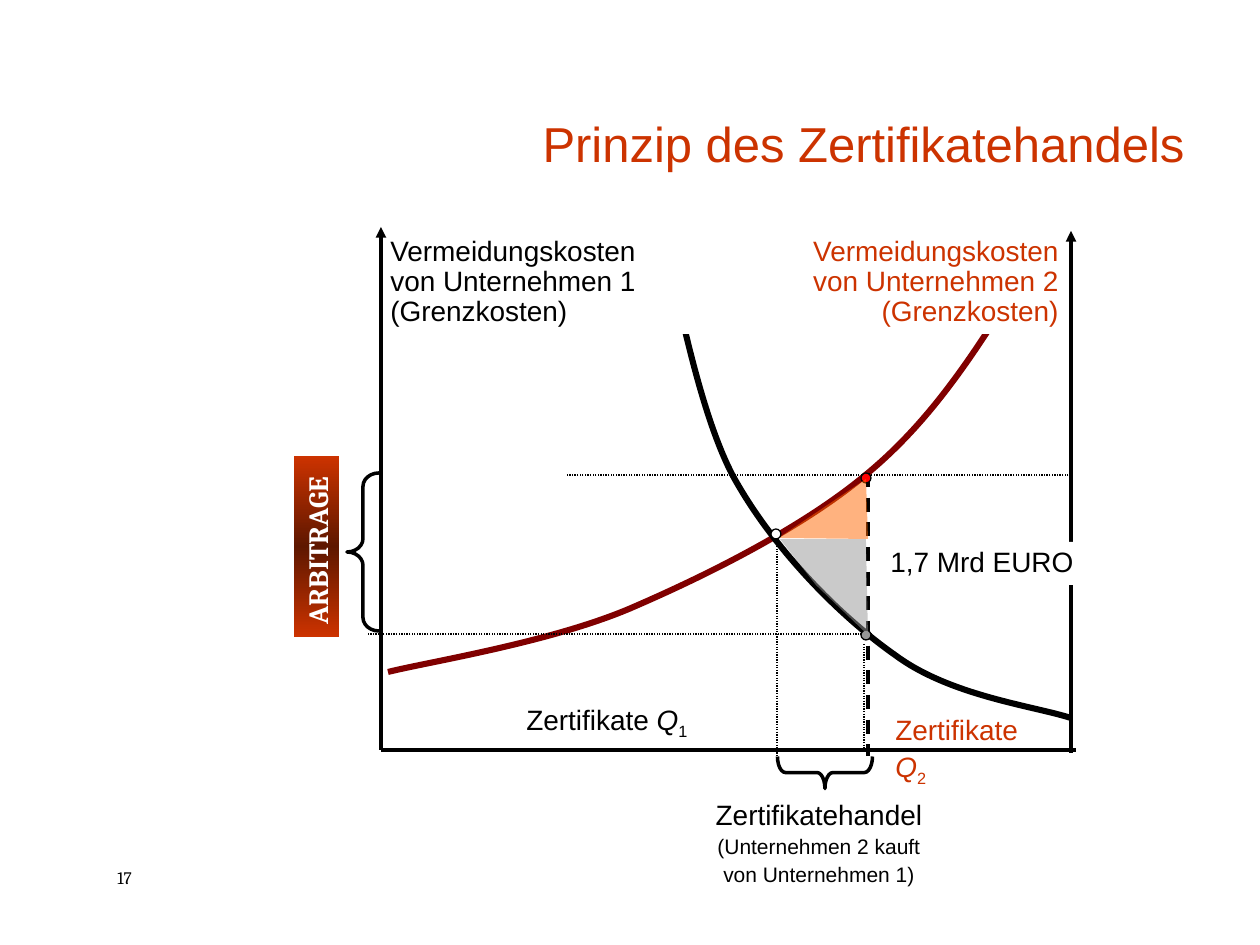
from copy import deepcopy
from dataclasses import dataclass

from lxml.etree import SubElement
from pptx import Presentation
from pptx.dml.color import RGBColor
from pptx.enum.dml import MSO_LINE_DASH_STYLE as Dash
from pptx.enum.shapes import MSO_CONNECTOR, MSO_SHAPE as Preset
from pptx.enum.text import MSO_ANCHOR, PP_ALIGN as Align
from pptx.oxml.ns import qn
from pptx.util import Pt

PX = 914400 / 126
COLORS = {
    "black": "000000", "white": "FFFFFF", "accent": "CC3300",
    "accent_dark": "5E1700", "maroon": "800000", "red": "FF0000",
    "grey": "969696", "orange": "FF6600",
}


def px(*lengths):
    return [round(length * PX) for length in lengths]


def rgb(name):
    return RGBColor.from_string(COLORS[name])


def write(shape, spans, color="black", align=Align.LEFT, spacing=None,
          font="Arial", wrap=True):
    """Fill a shape with one paragraph of (text, size, style) spans."""
    frame = shape.text_frame
    frame.word_wrap = wrap
    para = frame.paragraphs[0]
    para.alignment = align
    if spacing:
        para.line_spacing = spacing
    for text, size, style in spans:
        for index, part in enumerate(text.split("\n")):
            if index:
                para.add_line_break()
            span = para.add_run()
            span.text = part
            span.font.name = font
            span.font.size = Pt(size)
            span.font.color.rgb = rgb(color)
            span.font.bold = style == "bold"
            span.font.italic = style == "italic"
            if style == "sub":
                span.font._element.set("baseline", "-25000")


@dataclass
class Region:
    """Draws on a page with lengths in px, measured from its left and top."""
    page: object
    left: int
    top: int

    def place(self, x, y, *size):
        return px(self.left + x, self.top + y, *size)

    def shape(self, preset, box, fill=None, line=None, width=0.75):
        shape = self.page.shapes.add_shape(preset, *self.place(*box))
        return paint(shape, fill, line, width)

    def label(self, box, spans, fill=None, **style):
        if fill:
            shape = self.shape(Preset.RECTANGLE, box, fill)
        else:
            shape = self.page.shapes.add_textbox(*self.place(*box))
        shape.text_frame.vertical_anchor = MSO_ANCHOR.TOP
        write(shape, spans, **style)
        return shape

    def dot(self, x, y, fill):
        self.shape(Preset.OVAL, (x - 5, y - 5, 10, 10), fill, "black")

    def brace(self, box, curl, rotation=0):
        shape = self.shape(Preset.LEFT_BRACE, box, None, "black", 2)
        shape.adjustments[0] = curl
        shape.rotation = rotation

    def line(self, start, end, width=2, dash=None, arrow=False):
        line = self.page.shapes.add_connector(
            MSO_CONNECTOR.STRAIGHT, *self.place(*start), *self.place(*end))
        line.line.color.rgb = rgb("black")
        line.line.width = Pt(width)
        if dash:
            line.line.dash_style = dash
        if arrow:
            SubElement(line.line._get_or_add_ln(), qn("a:tailEnd"), type="triangle")
        SubElement(line._element.spPr, qn("a:effectLst"))

    def dotted(self, start, end):
        self.line(start, end, 0.75, Dash.ROUND_DOT)

    def outline(self, points, close):
        (x, y), *others = [(self.left + x, self.top + y) for x, y in points]
        builder = self.page.shapes.build_freeform(x, y, scale=PX)
        builder.add_line_segments(others, close=close)
        return builder.convert_to_shape()

    def curve(self, points, color):
        """Draw Bézier segments: a start, then two handles and an end for each."""
        shape = self.outline(points, close=False)
        steps = list(shape._element.iter(qn("a:lnTo")))
        for first in range(0, len(steps), 3):
            bezier, *others = steps[first:first + 3]
            bezier.tag = qn("a:cubicBezTo")
            for step in others:
                bezier.append(step[0])
                step.getparent().remove(step)
        paint(shape, None, color, 3.5)

    def area(self, points, color):
        shape = paint(self.outline(points, close=True), color)
        tint = shape.fill._xPr.find(qn("a:solidFill"))[0]
        SubElement(tint, qn("a:alpha"), val="50000")


def paint(shape, fill=None, line=None, width=0.75):
    shape.shadow.inherit = False
    if fill:
        shape.fill.solid()
        shape.fill.fore_color.rgb = rgb(fill)
    else:
        shape.fill.background()
    if line:
        shape.line.color.rgb = rgb(line)
        shape.line.width = Pt(width)
    else:
        shape.line.fill.background()
    return shape


def axis_title(region, box, firm, **style):
    text = f"Vermeidungskosten\nvon Unternehmen {firm} (Grenzkosten)"
    region.label(box, [(text, 16, "")], "white", spacing=0.9, **style)


def quantity(region, box, firm, **style):
    spans = [("Zertifikate", 16, ""), (" Q", 16, "italic"), (firm, 16, "sub")]
    region.label(box, spans, spacing=1.1, **style)


def arbitrage_tag(region, box):
    shape = region.label(box, [("ARBITRAGE", 16, "bold")], "accent",
                         color="white", font="Cambria", wrap=False)
    shape.rotation = 270
    fill = shape.fill
    fill.gradient()
    fill.gradient_angle = 90
    for stop in fill.gradient_stops:
        stop.color.rgb = rgb("accent")
    gradient = shape._element.spPr.find(qn("a:gradFill"))
    gradient.set("rotWithShape", "0")
    stops = gradient.find(qn("a:gsLst"))
    middle = deepcopy(stops[0])
    middle.set("pos", "50000")
    middle[0].set("val", COLORS["accent_dark"])
    stops.insert(1, middle)


def firm_two(region):
    region.curve([(638, 54), (596, 120), (554, 188), (488, 243), (424, 297),
                  (328, 345), (249, 379), (168, 413), (48, 432), (8, 442)], "maroon")
    region.line((488, 243), (488, 526), dash=Dash.DASH)
    axis_title(region, (376, 1, 315, 103), 2, color="accent", align=Align.RIGHT)
    region.dotted((691, 245), (187, 245))
    region.dot(486, 248, "red")
    region.brace((-33, 243, 32, 158), 0.417)
    arbitrage_tag(region, (-154, 294, 181, 45))
    quantity(region, (503, 473, 185, 54), "2", color="accent")


def firm_one(region):
    region.line((1, 520), (696, 520))
    region.curve([(282, 3), (294, 43), (316, 176), (353, 246), (392, 317),
                  (458, 385), (515, 425), (570, 466), (654, 476), (691, 488)], "black")
    axis_title(region, (-2, 1, 325, 103), 1)
    region.dotted((492, 404), (-12, 404))
    quantity(region, (134, 463, 199, 54), "1")
    region.dot(486, 405, "grey")
    region.line((1, 520), (1, -3), arrow=True)
    region.dotted((484, 414), (484, 518))
    region.line((691, 523), (691, 1), arrow=True)


def trade(region):
    region.area([(400, 309), (486, 309), (488, 405), (436, 355)], "grey")
    region.area([(400, 307), (486, 249), (488, 309), (396, 308)], "orange")
    region.dotted((397, 316), (397, 526))
    region.brace((429, 495, 32, 95), 0.25, 270)
    region.label((313, 558, 252, 104),
                 [("Zertifikatehandel ", 16, ""),
                  ("(Unternehmen 2 kauft von Unternehmen 1)", 12, "")],
                 align=Align.CENTER, spacing=1.1)
    region.dot(396, 304, "white")
    region.label((498, 312, 258, 43), [("1,7 Mrd EURO", 16, "")], "white", spacing=0.9)


def heading(page, box):
    title = page.shapes.title
    title.left, title.top, title.width, title.height = px(*box)
    title.text_frame.vertical_anchor = MSO_ANCHOR.BOTTOM
    write(title, [("Prinzip des Zertifikatehandels", 28, "")], "accent", Align.RIGHT)


def main():
    deck = Presentation()
    deck.slide_width, deck.slide_height = px(1260, 945)
    page = deck.slides.add_slide(deck.slide_layouts[5])
    heading(page, (126, 53, 1071, 126))
    Region(page, 105, 861).label((0, 0, 84, 37), [("17", 10, "")], font="Cambria")
    diagram = Region(page, 380, 230)
    for draw in (firm_two, firm_one, trade):
        draw(diagram)
    deck.save("out.pptx")


if __name__ == "__main__":
    main()
